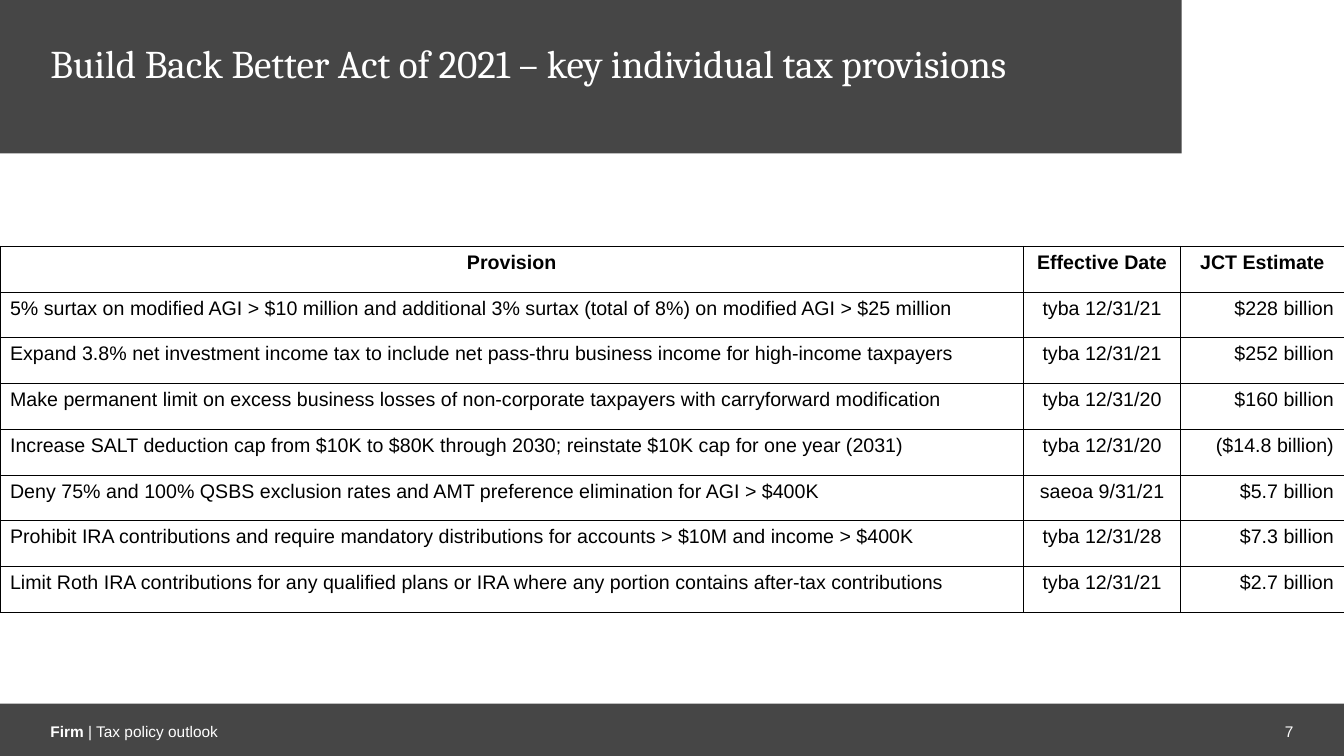
from dataclasses import dataclass

from lxml import etree
from pptx import Presentation
from pptx.dml.color import RGBColor
from pptx.enum.shapes import MSO_SHAPE
from pptx.enum.text import MSO_ANCHOR, PP_ALIGN
from pptx.oxml.ns import qn
from pptx.util import Pt

RECTANGLE = MSO_SHAPE.RECTANGLE
TOP, MIDDLE = MSO_ANCHOR.TOP, MSO_ANCHOR.MIDDLE
LEFT, CENTER, RIGHT = PP_ALIGN.LEFT, PP_ALIGN.CENTER, PP_ALIGN.RIGHT


@dataclass(frozen=True)
class Theme:
    band: RGBColor = RGBColor(0x46, 0x46, 0x46)
    light: RGBColor = RGBColor(0xFF, 0xFF, 0xFF)
    ink: RGBColor = RGBColor(0, 0, 0)
    title_font: str = "Cambria"
    body_font: str = "Arial"
    title_size: float = 28
    table_size: float = 14
    footer_size: float = 11
    rule_width: float = 0.75


THEME = Theme()
SLIDE_WIDTH, SLIDE_HEIGHT = 960, 540
MARGIN = 36
BLEED = 1.4

HEADINGS = ("Provision", "Effective Date", "JCT Estimate")
PROVISIONS = (
    ("5% surtax on modified AGI > $10 million and additional 3% surtax (total of 8%) on modified AGI > $25 million",
     "tyba 12/31/21", "$228 billion"),
    ("Expand 3.8% net investment income tax to include net pass-thru business income for high-income taxpayers",
     "tyba 12/31/21", "$252 billion"),
    ("Make permanent limit on excess business losses of non-corporate taxpayers with carryforward modification",
     "tyba 12/31/20", "$160 billion"),
    ("Increase SALT deduction cap from $10K to $80K through 2030; reinstate $10K cap for one year (2031)",
     "tyba 12/31/20", "($14.8 billion)"),
    ("Deny 75% and 100% QSBS exclusion rates and AMT preference elimination for AGI > $400K",
     "saeoa 9/31/21", "$5.7 billion"),
    ("Prohibit IRA contributions and require mandatory distributions for accounts > $10M and income > $400K",
     "tyba 12/31/28", "$7.3 billion"),
    ("Limit Roth IRA contributions for any qualified plans or IRA where any portion contains after-tax contributions",
     "tyba 12/31/21", "$2.7 billion"),
)
COLUMN_WIDTHS = (731, 112.4, 116.6)
COLUMN_ALIGNMENTS = (LEFT, CENTER, RIGHT)


def style(paragraph, font_name, size, color, alignment=LEFT):
    paragraph.alignment = alignment
    paragraph.font.name = font_name
    paragraph.font.size = Pt(size)
    paragraph.font.color.rgb = color


def add_band(slide, box):
    band = slide.shapes.add_shape(RECTANGLE, *map(Pt, box))
    band.shadow.inherit = False
    band.fill.solid()
    band.fill.fore_color.rgb = THEME.band
    band.line.fill.background()


def add_text(slide, box, anchor):
    """Add a text box without insets and return its first paragraph."""
    frame = slide.shapes.add_textbox(*map(Pt, box)).text_frame
    frame.word_wrap = True
    frame.vertical_anchor = anchor
    frame.margin_left = frame.margin_right = frame.margin_top = frame.margin_bottom = 0
    return frame.paragraphs[0]


def add_header(slide, box):
    left, top, width, height = box
    add_band(slide, box)
    title = add_text(slide, (MARGIN, top + 29.5, left + width - MARGIN - 2, 33), TOP)
    title.text = "Build Back Better Act of 2021 – key individual tax provisions"
    style(title, THEME.title_font, THEME.title_size, THEME.light)


def add_footer(slide, box):
    top = box[1] + 15
    add_band(slide, box)
    source = add_text(slide, (MARGIN, top, 324, 9.4), MIDDLE)
    for text, bold in (("Firm ", True), ("| Tax policy outlook", False)):
        run = source.add_run()
        run.text = text
        run.font.bold = bold
    style(source, THEME.body_font, THEME.footer_size, THEME.light)
    number_width = 216
    number = add_text(slide, (SLIDE_WIDTH - MARGIN - number_width, top, number_width, 9.4), MIDDLE)
    number.text = "7"
    style(number, THEME.body_font, THEME.footer_size, THEME.light, RIGHT)


def add_borders(cell):
    properties = cell._tc.get_or_add_tcPr()
    for position, side in enumerate(("lnL", "lnR", "lnT", "lnB")):
        line = etree.Element(qn(f"a:{side}"), w=str(Pt(THEME.rule_width)))
        fill = etree.SubElement(line, qn("a:solidFill"))
        etree.SubElement(fill, qn("a:srgbClr"), val=str(THEME.ink))
        properties.insert(position, line)


def add_provisions(slide, box):
    rows = (HEADINGS, *PROVISIONS)
    table = slide.shapes.add_table(len(rows), len(HEADINGS), *map(Pt, box)).table
    table.first_row = table.horz_banding = False
    for column, width in zip(table.columns, COLUMN_WIDTHS):
        column.width = Pt(width)
    for row_index, texts in enumerate(rows):
        is_heading = row_index == 0
        table.rows[row_index].height = Pt(box[3] / len(rows))
        for column_index, text in enumerate(texts):
            cell = table.cell(row_index, column_index)
            cell.fill.background()
            add_borders(cell)
            paragraph = cell.text_frame.paragraphs[0]
            paragraph.text = text
            alignment = CENTER if is_heading else COLUMN_ALIGNMENTS[column_index]
            style(paragraph, THEME.body_font, THEME.table_size, THEME.ink, alignment)
            paragraph.font.bold = is_heading


def main():
    deck = Presentation()
    deck.slide_width, deck.slide_height = Pt(SLIDE_WIDTH), Pt(SLIDE_HEIGHT)
    slide = deck.slides.add_slide(deck.slide_layouts[6])
    add_header(slide, (-BLEED, -BLEED, 845.4, 111))
    add_footer(slide, (-BLEED, 502.6, SLIDE_WIDTH + 2 * BLEED, 38.8))
    add_provisions(slide, (0, 176, SLIDE_WIDTH, 261.6))
    deck.save("out.pptx")


if __name__ == "__main__":
    main()
